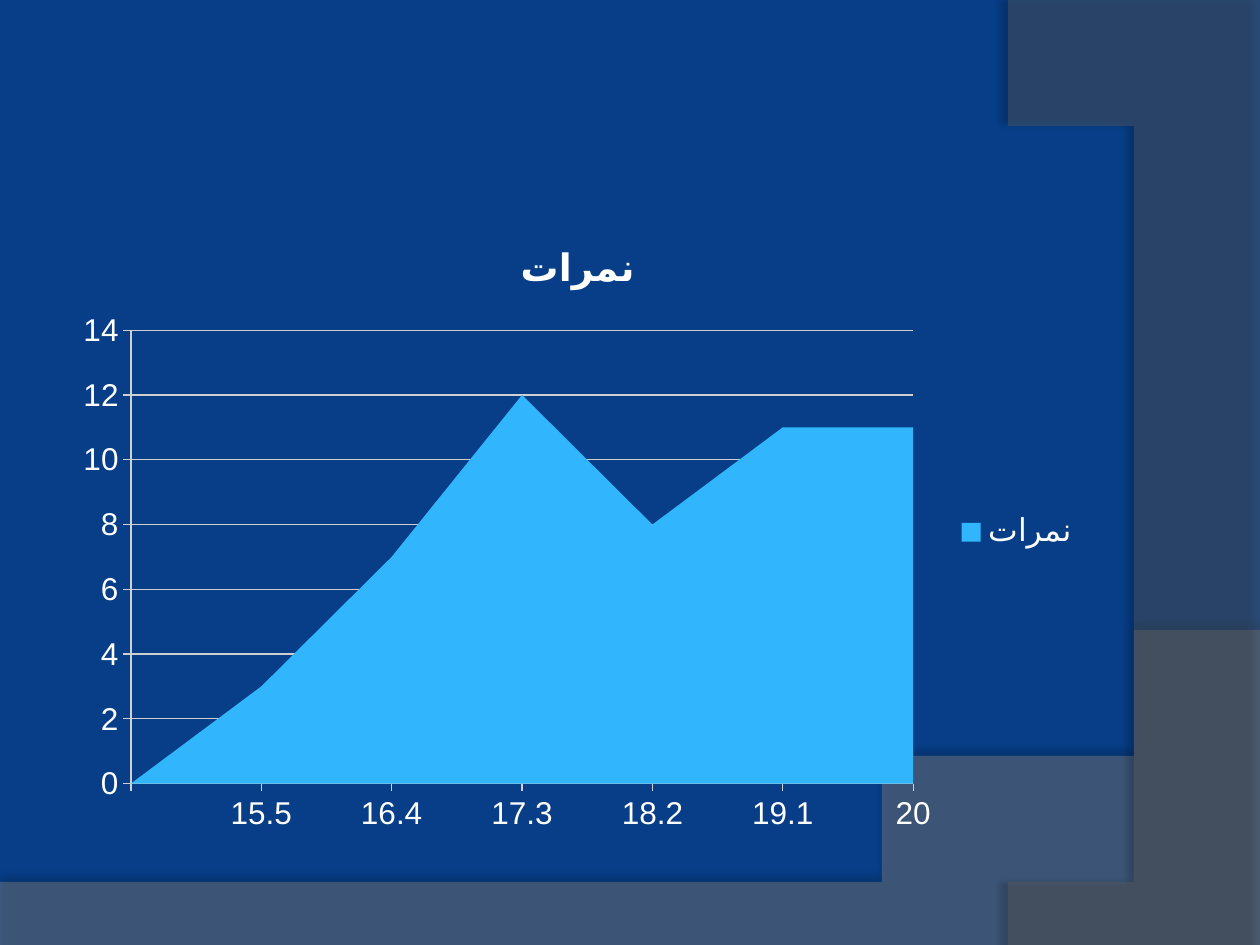
"""Build a slide with an area chart of grades over a curved backdrop."""
from lxml import etree
from pptx import Presentation
from pptx import util as u
from pptx.chart.data import CategoryChartData
from pptx.dml.color import RGBColor
from pptx.enum import chart as ch
from pptx.oxml import parse_xml
from pptx.oxml.ns import nsdecls, qn

WIDE, HIGH = 10, 7.5
HUES = {"back": "073E87", "wave": "7F7F7F", "side": "5E5E5E",
        "area": "31B6FD", "text": "FFFFFF", "grid": "D0D0D0"}
FONT = "Arial"
NAME = "نمرات"
CATS = ["", "15.5", "16.4", "17.3", "18.2", "19.1", "20"]
VALS = [None, 3, 7, 12, 8, 11, 11]
BOX = (0.5, 1.75, 8.17, 4.95)
PLOT = {"x": 0.066, "y": 0.176, "w": 0.76, "h": 0.727}
BANDS = [
    {"hue": "wave", "alpha": 45, "shade": (35, 4, 3.5, 270),
     "curve": [(10, 5.2), (5.59, 7.29), (3.91, 7.19), (0, 7.05)],
     "rest": [(0, 7.51), (10, 7.51)]},
    {"hue": "side", "alpha": 40, "shade": (45, 4, 4, 180),
     "curve": [(8.21, 7.5), (9.35, 6.19), (10.18, 3), (8, 0)],
     "rest": [(10, 0.02), (10, 7.5)]},
]


def tint(name):
    return RGBColor.from_string(HUES[name])


def trace(curve, steps=60):
    """Return points along a cubic curve."""
    def spot(t):
        parts = ((1 - t) ** 3, 3 * t * (1 - t) ** 2, 3 * t * t * (1 - t), t ** 3)
        return tuple(sum(k * p[i] for k, p in zip(parts, curve)) for i in (0, 1))
    return [spot(n / steps) for n in range(steps + 1)]


def add_band(slide, band):
    """Draw one see-through curved band with a soft shadow."""
    first, *others = trace(band["curve"]) + band["rest"]
    path = slide.shapes.build_freeform(*first, scale=u.Inches(1))
    path.add_line_segments(others, close=True)
    shape = path.convert_to_shape()
    shape.line.fill.background()
    shape.fill.solid()
    shape.fill.fore_color.rgb = tint(band["hue"])
    props = shape.fill._xPr
    color = props.find(qn("a:solidFill"))[0]
    etree.SubElement(color, qn("a:alpha")).set("val", str(band["alpha"] * 1000))
    alpha, blur, dist, turn = band["shade"]
    props.append(parse_xml(
        f'<a:effectLst {nsdecls("a")}><a:outerShdw blurRad="{u.Pt(blur)}" '
        f'dist="{u.Pt(dist)}" dir="{turn * 60000}" algn="ctr" rotWithShape="0">'
        f'<a:srgbClr val="000000"><a:alpha val="{alpha * 1000}"/></a:srgbClr>'
        '</a:outerShdw></a:effectLst>'))


def style(font, size, bold=False):
    font.name, font.size, font.bold = FONT, u.Pt(size), bold
    font.color.rgb = tint("text")


def rule(line):
    line.color.rgb = tint("grid")
    line.width = u.Pt(0.75)


def add_graph(slide):
    """Add the stacked area chart with its title, axes and legend."""
    data = CategoryChartData()
    data.categories = CATS
    data.add_series(NAME, VALS)
    graph = slide.shapes.add_chart(
        ch.XL_CHART_TYPE.AREA_STACKED, *map(u.Inches, BOX), data).chart
    style(graph.font, 18)
    graph.has_title = True
    graph.chart_title.text_frame.text = NAME
    style(graph.chart_title.text_frame.paragraphs[0].runs[0].font, 21.6, True)
    graph.has_legend = True
    graph.legend.position = ch.XL_LEGEND_POSITION.RIGHT
    graph.legend.include_in_layout = False
    plot = graph.plots[0]
    plot.vary_by_categories = False
    fill = plot.series[0].format.fill
    fill.solid()
    fill.fore_color.rgb = tint("area")
    for axis in (graph.category_axis, graph.value_axis):
        axis.major_tick_mark = ch.XL_TICK_MARK.OUTSIDE
        axis.minor_tick_mark = ch.XL_TICK_MARK.NONE
        rule(axis.format.line)
    graph.category_axis.has_major_gridlines = False
    graph.value_axis.has_major_gridlines = True
    rule(graph.value_axis.major_gridlines.format.line)
    root = graph._chartSpace
    for cross in root.iter(qn("c:crossBetween")):
        cross.set("val", "midCat")
    zone = next(root.iter(qn("c:plotArea")))
    for old in zone.findall(qn("c:layout")):
        zone.remove(old)
    sizes = "".join(f'<c:{k} val="{v}"/>' for k, v in PLOT.items())
    zone.insert(0, parse_xml(
        f'<c:layout {nsdecls("c")}><c:manualLayout><c:layoutTarget val="inner"/>'
        f'<c:xMode val="edge"/><c:yMode val="edge"/>{sizes}'
        '</c:manualLayout></c:layout>'))


def main():
    deck = Presentation()
    deck.slide_width, deck.slide_height = u.Inches(WIDE), u.Inches(HIGH)
    slide = deck.slides.add_slide(deck.slide_layouts[6])
    slide.background.fill.solid()
    slide.background.fill.fore_color.rgb = tint("back")
    for band in BANDS:
        add_band(slide, band)
    add_graph(slide)
    deck.save("out.pptx")


if __name__ == "__main__":
    main()
